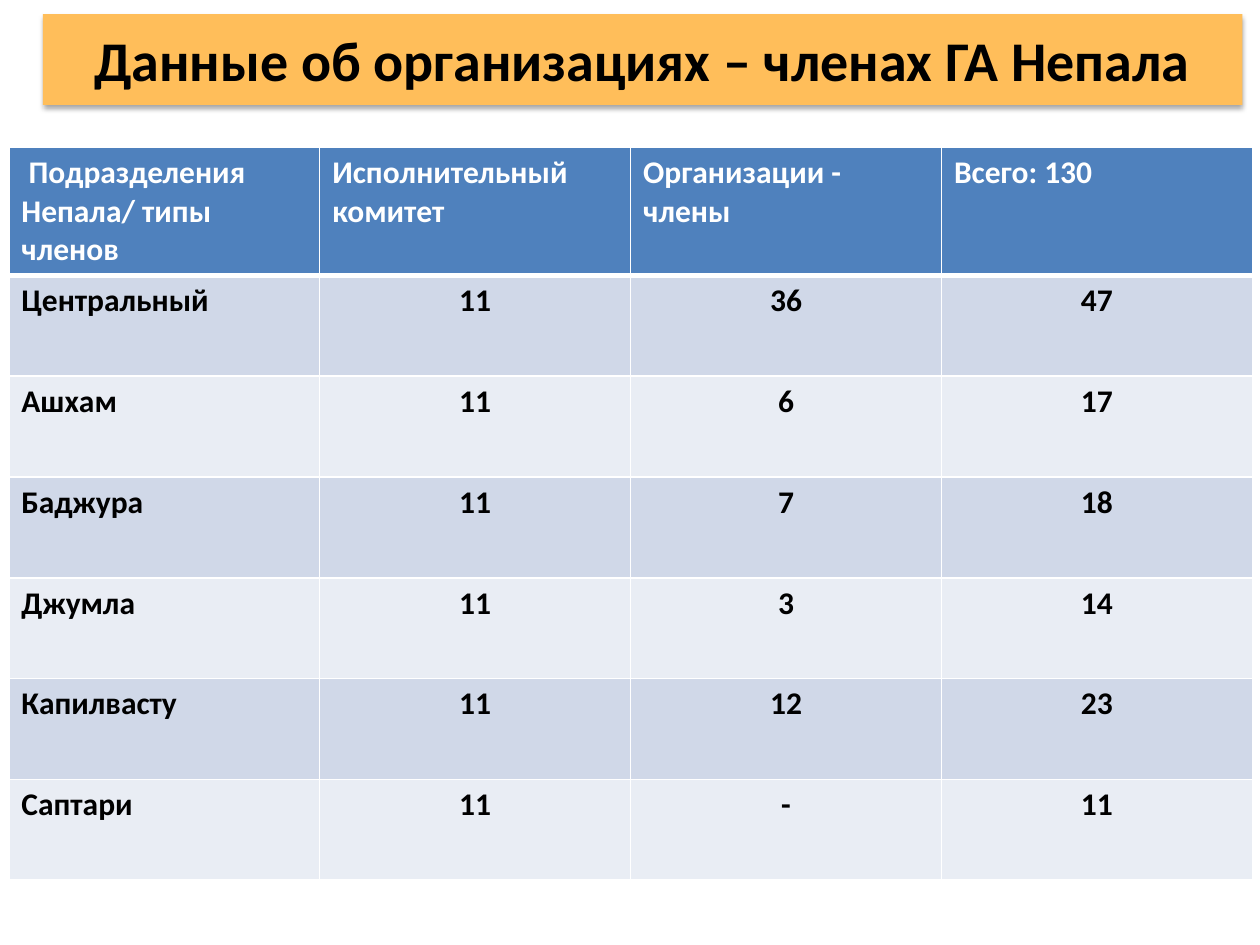
from lxml import etree
from pptx import Presentation
from pptx import util as u
from pptx.dml.color import RGBColor
from pptx.enum import shapes, text
from pptx.oxml.ns import qn

WIDTH, HEIGHT = u.Inches(10), u.Inches(7.5)
HEADER, BANDS = "4F81BD", ("D0D8E8", "E9EDF4")
COLUMNS = [" Подразделения Непала/ типы членов", "Исполнительный комитет",
           "Организации - члены", "Всего: 130"]
DIVISIONS = [
    ("Центральный", "11", "36", "47"),
    ("Ашхам", "11", "6", "17"),
    ("Баджура", "11", "7", "18"),
    ("Джумла", "11", "3", "14"),
    ("Капилвасту", "11", "12", "23"),
    ("Саптари", "11", "-", "11"),
]


def paint(fill, color):
    fill.solid()
    fill.fore_color.rgb = RGBColor.from_string(color)


def write(tf, words, size=18, color="000000", align=text.PP_ALIGN.LEFT):
    p = tf.paragraphs[0]
    p.alignment = align
    r = p.add_run()
    r.text = words
    r.font.name, r.font.size, r.font.bold = "Calibri", u.Pt(size), True
    r.font.color.rgb = RGBColor.from_string(color)


def add_node(parent, tag, **attrs):
    return etree.SubElement(parent, qn(tag), {k: str(v) for k, v in attrs.items()})


def add_shadow(sp):
    sp.shadow.inherit = False
    effects = sp._element.spPr.find(qn("a:effectLst"))
    shadow = add_node(effects, "a:outerShdw", blurRad=u.Pt(3.1), dist=u.Pt(1.8),
                      dir=90 * 60000, rotWithShape=0)
    add_node(add_node(shadow, "a:srgbClr", val="000000"), "a:alpha", val=35000)


def add_borders(cell, **widths):
    tc_pr = cell._tc.get_or_add_tcPr()
    for side in "LRTB":
        line = add_node(tc_pr, f"a:ln{side}", w=u.Pt(widths.get(side, 1)))
        add_node(add_node(line, "a:solidFill"), "a:srgbClr", val="FFFFFF")


def add_banner(s, words):
    sp = s.shapes.add_shape(shapes.MSO_SHAPE.RECTANGLE, int(WIDTH * 0.034),
                            int(HEIGHT * 0.015), int(WIDTH * 0.952), int(HEIGHT * 0.096))
    paint(sp.fill, "FFBE5A")
    sp.line.fill.background()
    add_shadow(sp)
    sp.text_frame.word_wrap = True
    sp.text_frame.vertical_anchor = text.MSO_ANCHOR.MIDDLE
    write(sp.text_frame, words, size=32, align=text.PP_ALIGN.CENTER)


def add_members_table(s):
    rows = [COLUMNS, *DIVISIONS]
    heights = [u.Inches(0.84)] + [u.Inches(0.8)] * len(DIVISIONS)
    table = s.shapes.add_table(len(rows), len(COLUMNS), u.Inches(0.07), u.Inches(1.17),
                               int(WIDTH * 0.987), sum(heights)).table
    for i, (row, height) in enumerate(zip(rows, heights)):
        table.rows[i].height = height
        for j, words in enumerate(row):
            cell = table.cell(i, j)
            add_borders(cell, B=3 if i == 0 else 1, T=3 if i == 1 else 1)
            paint(cell.fill, BANDS[(i - 1) % 2] if i else HEADER)
            write(cell.text_frame, words, color="000000" if i else "FFFFFF",
                  align=text.PP_ALIGN.CENTER if i and j else text.PP_ALIGN.LEFT)


def main():
    prs = Presentation()
    prs.slide_width, prs.slide_height = WIDTH, HEIGHT
    s = prs.slides.add_slide(prs.slide_layouts[6])
    add_members_table(s)
    add_banner(s, "Данные об организациях – членах ГА Непала")
    prs.save("out.pptx")


if __name__ == "__main__":
    main()
